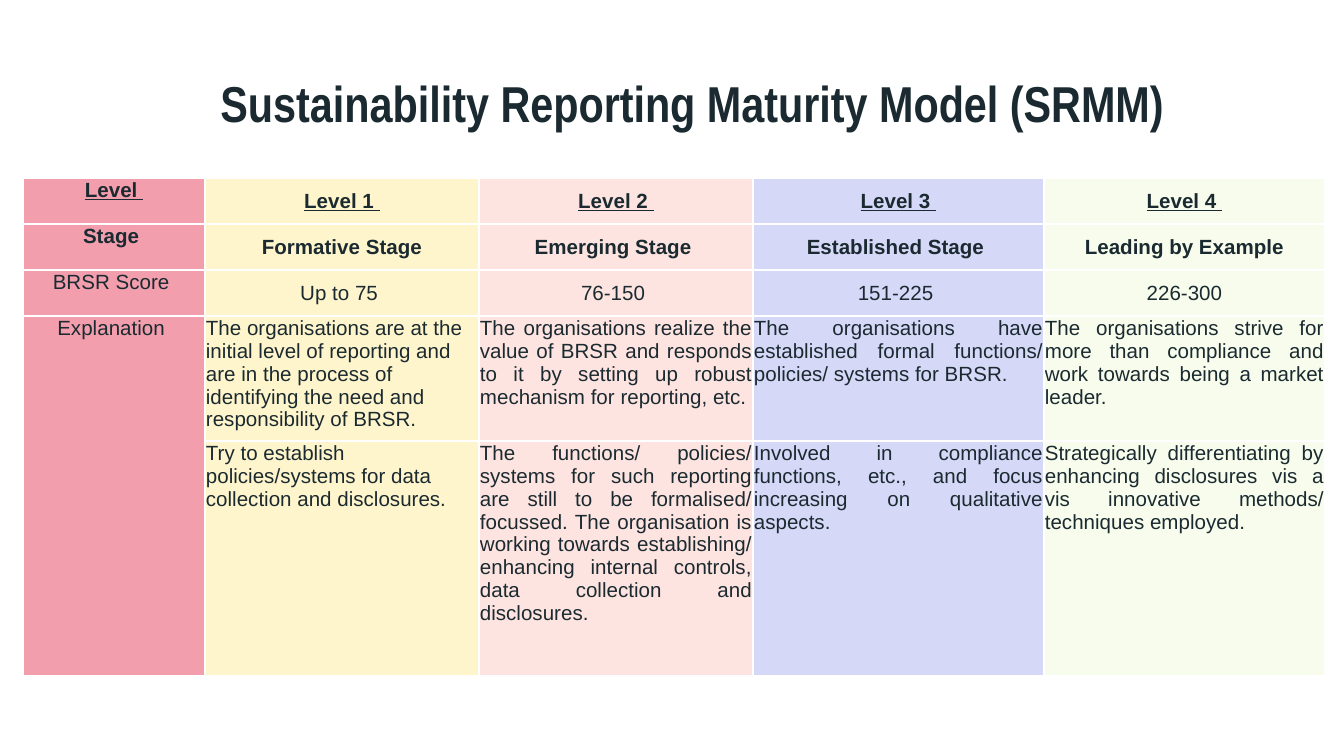
"""Build the Sustainability Reporting Maturity Model slide."""
from lxml import etree
from pptx import Presentation
from pptx.dml.color import RGBColor
from pptx.enum.text import MSO_ANCHOR, MSO_AUTO_SIZE, PP_ALIGN
from pptx.oxml.ns import qn
from pptx.util import Pt

TOP, MIDDLE, BOTTOM = MSO_ANCHOR.TOP, MSO_ANCHOR.MIDDLE, MSO_ANCHOR.BOTTOM
LEFT, CENTER, JUSTIFY = PP_ALIGN.LEFT, PP_ALIGN.CENTER, PP_ALIGN.JUSTIFY
NO_AUTOFIT = MSO_AUTO_SIZE.NONE

TITLE = "Sustainability Reporting Maturity Model (SRMM)"
ROWS = [
    ("Level ", "Level 1 ", "Level 2 ", "Level 3 ", "Level 4 "),
    ("Stage ", "Formative Stage", "Emerging Stage ", "Established Stage ",
     "Leading by Example"),
    ("BRSR Score ", "Up to 75 ", "76-150 ", "151-225 ", "226-300"),
    ("Explanation ",
     "The organisations are at the initial level of reporting and are in the "
     "process of identifying the need and responsibility of BRSR.",
     "The organisations realize the value of BRSR and responds to it by "
     "setting up robust mechanism for reporting, etc.",
     "The organisations have established formal functions/ policies/ systems "
     "for BRSR. ",
     "The organisations strive for more than compliance and work towards "
     "being a market leader."),
    ("",
     "Try to establish\npolicies/systems for data collection and disclosures.",
     "The functions/ policies/ systems for such reporting are still to be "
     "formalised/ focussed. The organisation is working towards establishing/ "
     "enhancing internal controls, data collection and disclosures. ",
     "Involved in compliance functions, etc., and focus increasing on "
     "qualitative aspects.",
     "Strategically differentiating by enhancing disclosures vis a vis "
     "innovative methods/ techniques employed. "),
]
LEVEL_ROW, STAGE_ROW, EXPLANATION_ROW = 0, 1, 3

THEME = {
    "ink": "1A2A30", "border": "FFFFFF",
    "columns": ("F39EAD", "FFF5CC", "FEE4E0", "D5D8F7", "F7FCEC"),
    "title_font": "Arial Narrow", "title_size": 27,
    "body_font": "Arial", "body_size": 11, "border_width": 1,
}

SCALE = 914400 / 134.4
SLIDE_SIZE = (1344, 756)
TITLE_BOX = (207, 40, 1183, 100)
TABLE_ORIGIN = (23, 178)
COLUMN_WIDTHS = (182, 274, 274, 291, 281)
ROW_HEIGHTS = (46, 46, 46, 125, 235)
CELL_MARGIN = 1


def px(length):
    """Turn px into EMU."""
    return round(length * SCALE)


def apply(target, values):
    """Set each named attribute on the target."""
    for name, value in values.items():
        setattr(target, name, value)


def style_font(font, name, size, bold, underline=False):
    """Format a font in the ink colour."""
    apply(font, {"name": name, "size": Pt(size), "bold": bold,
                 "underline": underline})
    font.color.rgb = RGBColor.from_string(THEME["ink"])


def add_borders(cell):
    """Draw the four sides of a cell."""
    properties = cell._tc.get_or_add_tcPr()
    for position, side in enumerate(("lnL", "lnR", "lnT", "lnB")):
        line = etree.Element(qn(f"a:{side}"), w=str(Pt(THEME["border_width"])))
        fill = etree.SubElement(line, qn("a:solidFill"))
        etree.SubElement(fill, qn("a:srgbClr"), val=THEME["border"])
        properties.insert(position, line)


def alignment_of(row, column):
    """Choose the alignment of a cell's text."""
    if column == 0 or row < EXPLANATION_ROW:
        return CENTER
    return LEFT if column == 1 else JUSTIFY


def fill_cell(cell, text, row, column):
    """Write and format one table cell."""
    heading = column > 0 and row < EXPLANATION_ROW
    apply(cell, {
        "margin_left": px(CELL_MARGIN), "margin_right": px(CELL_MARGIN),
        "margin_top": px(CELL_MARGIN), "margin_bottom": 0,
        "vertical_anchor": MIDDLE if heading else TOP,
    })
    cell.fill.solid()
    cell.fill.fore_color.rgb = RGBColor.from_string(THEME["columns"][column])
    add_borders(cell)
    cell.text_frame.text = text
    for paragraph in cell.text_frame.paragraphs:
        paragraph.alignment = alignment_of(row, column)
        style_font(paragraph.font, THEME["body_font"], THEME["body_size"],
                   row <= STAGE_ROW, row == LEVEL_ROW)
        for run in paragraph.runs:
            style_font(run.font, THEME["body_font"], THEME["body_size"],
                       row <= STAGE_ROW, row == LEVEL_ROW)


def add_title(slide):
    """Place and format the title."""
    title = slide.shapes.title
    apply(title, dict(zip(("left", "top", "width", "height"),
                          map(px, TITLE_BOX))))
    frame = title.text_frame
    frame.text = TITLE
    apply(frame, {"vertical_anchor": BOTTOM, "word_wrap": True,
                  "auto_size": NO_AUTOFIT})
    heading = frame.paragraphs[0]
    apply(heading, {"alignment": LEFT, "line_spacing": 0.9})
    style_font(heading.runs[0].font, THEME["title_font"],
               THEME["title_size"], True)


def add_maturity_table(slide):
    """Build the maturity level table."""
    table = slide.shapes.add_table(
        len(ROWS), len(COLUMN_WIDTHS), *map(px, TABLE_ORIGIN),
        px(sum(COLUMN_WIDTHS)), px(sum(ROW_HEIGHTS))).table
    apply(table, {"first_row": False, "horz_banding": False})
    for column, width in zip(table.columns, COLUMN_WIDTHS):
        column.width = px(width)
    for row, height in zip(table.rows, ROW_HEIGHTS):
        row.height = px(height)
    for row, texts in enumerate(ROWS):
        for column, text in enumerate(texts):
            fill_cell(table.cell(row, column), text, row, column)
    table.cell(EXPLANATION_ROW, 0).merge(table.cell(EXPLANATION_ROW + 1, 0))


def main():
    """Create and save the presentation."""
    deck = Presentation()
    deck.slide_width, deck.slide_height = map(px, SLIDE_SIZE)
    slide = deck.slides.add_slide(deck.slide_layouts[5])
    add_title(slide)
    add_maturity_table(slide)
    deck.save("out.pptx")


if __name__ == "__main__":
    main()
